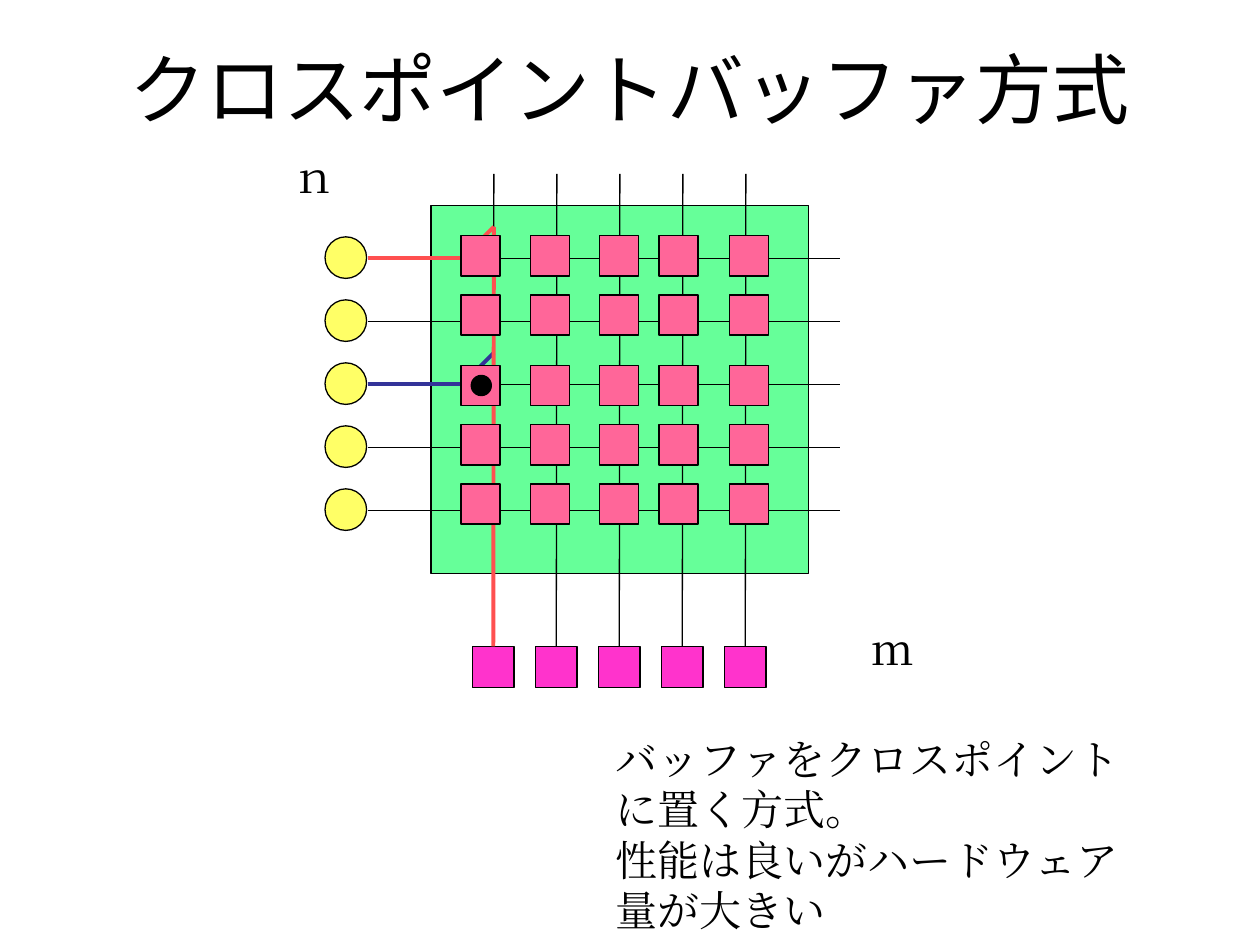
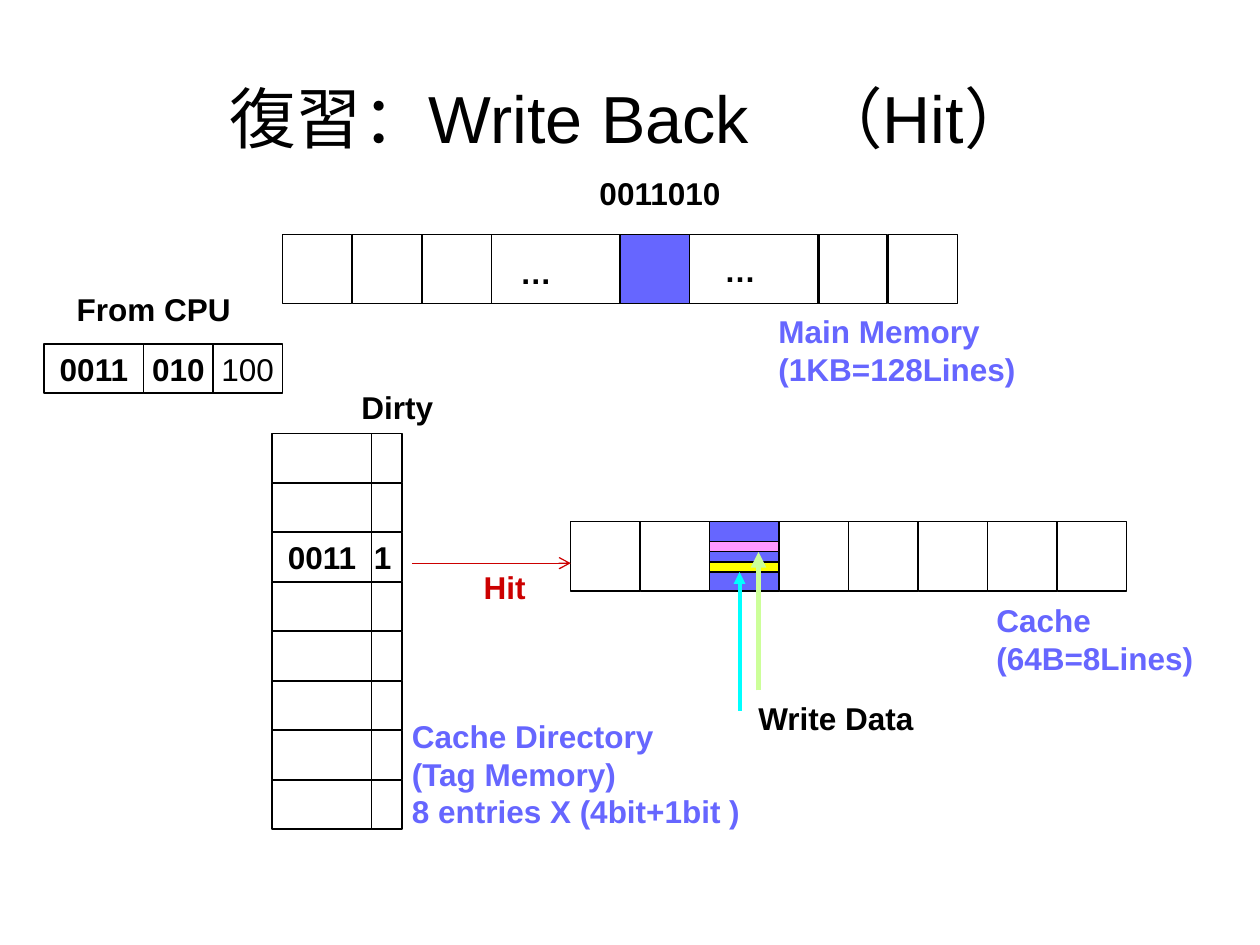
from lxml import etree
from pptx import Presentation
from pptx.dml.color import RGBColor
from pptx.enum.shapes import MSO_CONNECTOR, MSO_SHAPE
from pptx.enum.text import MSO_ANCHOR, MSO_AUTO_SIZE, PP_ALIGN
from pptx.oxml.ns import qn
from pptx.util import Inches, Pt

RECT, OVAL = MSO_SHAPE.RECTANGLE, MSO_SHAPE.OVAL
STRAIGHT = MSO_CONNECTOR.STRAIGHT
MIDDLE = MSO_ANCHOR.MIDDLE
CENTER = PP_ALIGN.CENTER
GROW, FIXED = MSO_AUTO_SIZE.SHAPE_TO_FIT_TEXT, MSO_AUTO_SIZE.NONE
TOP = 0

BLACK = RGBColor(0x00, 0x00, 0x00)
WHITE = RGBColor(0xFF, 0xFF, 0xFF)
GREEN = RGBColor(0x66, 0xFF, 0x99)
LEMON = RGBColor(0xFF, 0xFF, 0x66)
MAGENTA = RGBColor(0xFF, 0x33, 0xCC)
ROSE = RGBColor(0xFF, 0x66, 0x99)
CORAL = RGBColor(0xFF, 0x50, 0x50)
NAVY = RGBColor(0x33, 0x33, 0x99)
BLUE = RGBColor(0x66, 0x66, 0xFF)
RED = RGBColor(0xCC, 0x00, 0x00)
YELLOW = RGBColor(0xFF, 0xFF, 0x00)
PINK = RGBColor(0xFF, 0x99, 0xFF)
CYAN = RGBColor(0x00, 0xFF, 0xFF)
LIME = RGBColor(0xCC, 0xFF, 0x99)

SANS, SERIF = "Arial", "Times New Roman"


class Deck:
    """Holds the presentation, its style and the current slide."""

    def __init__(self):
        self.prs = Presentation()
        self.prs.slide_width = Inches(10)
        self.prs.slide_height = Inches(7.5)
        self.slide = None

    def start(self, title, top, size):
        """Add a slide with its title."""
        self.slide = self.prs.slides.add_slide(self.prs.slide_layouts[5])
        head = self.slide.shapes.title
        head.left, head.top = Inches(0.5), Inches(top)
        head.width, head.height = Inches(9), Inches(1.25)
        frame = head.text_frame
        frame.auto_size = FIXED
        frame.vertical_anchor = MIDDLE
        self.fill_text(frame, [title], size, SANS, BLACK, False, CENTER)

    def fill_text(self, frame, lines, size, face, color, bold, align=None):
        for i, line in enumerate(lines):
            para = frame.add_paragraph() if i else frame.paragraphs[0]
            para.alignment = align
            run = para.add_run()
            run.text = line
            font = run.font
            font.size, font.name, font.bold = Pt(size), face, bold
            font.color.rgb = color
            east = etree.SubElement(font._element, qn("a:ea"))
            east.set("typeface", face)

    def shape(self, x, y, w, h, fill=WHITE, kind=RECT, text=None, bold=True):
        item = self.slide.shapes.add_shape(
            kind, Inches(x), Inches(y), Inches(w), Inches(h))
        item.shadow.inherit = False
        if fill is None:
            item.fill.background()
        else:
            item.fill.solid()
            item.fill.fore_color.rgb = fill
        item.line.color.rgb = BLACK
        item.line.width = Pt(0.75)
        if text:
            frame = item.text_frame
            frame.word_wrap = False
            frame.vertical_anchor = MIDDLE
            self.fill_text(frame, [text], 18, SANS, BLACK, bold, CENTER)
        return item

    def line(self, x1, y1, x2, y2, color=BLACK, width=0.75, tip=None):
        item = self.slide.shapes.add_connector(
            STRAIGHT, Inches(x1), Inches(y1), Inches(x2), Inches(y2))
        item.line.color.rgb = color
        item.line.width = Pt(width)
        if tip:
            end = etree.SubElement(item.line._get_or_add_ln(), qn("a:tailEnd"))
            end.set("type", tip)
        etree.SubElement(item._element.spPr, qn("a:effectLst"))
        return item

    def label(self, x, y, w, h, *lines, color=BLACK, size=18, face=SANS,
              bold=True, wrap=False):
        box = self.slide.shapes.add_textbox(
            Inches(x), Inches(y), Inches(w), Inches(h))
        frame = box.text_frame
        frame.word_wrap = wrap
        frame.auto_size = GROW
        self.fill_text(frame, lines, size, face, color, bold)


def crosspoint(deck):
    deck.start("クロスポイントバッファ方式", 0.07, 44)
    rows = [2.05 + 0.5 * i for i in range(5)]
    cols = [3.92 + 0.5 * i for i in range(5)]
    node = 0.33
    deck.shape(3.42, 1.63, 3, 2.92, GREEN)
    for y in rows:
        deck.line(2.92, y, 6.67, y)
        deck.shape(2.58, y - 0.17, node, node, LEMON, OVAL)
    sinks = []
    for x in cols:
        sink = deck.shape(x - 0.17, 5.13, node, node, MAGENTA)
        deck.line(x, 5.13, x, 1.38).begin_connect(sink, TOP)
        sinks.append(sink)

    plain = {"size": 24, "face": SERIF, "bold": False}
    deck.label(2.23, 1.15, 0.41, 0.5, "ｎ", **plain)
    deck.label(6.82, 4.9, 0.51, 0.5, "ｍ", **plain)
    for y, color in ((rows[0], CORAL), (rows[2], NAVY)):
        deck.line(3.67, y, 3.92, y - 0.25, color, 2.25)
        deck.line(2.92, y, 3.67, y, color, 2.25)
    route = deck.line(3.92, 1.8, 3.92, 5.13, CORAL, 2.25)
    route.end_connect(sinks[0], TOP)
    deck.label(4.79, 5.77, 5.03, 1.72, "バッファをクロスポイント",
               "に置く方式。", "性能は良いがハードウェア", "量が大きい",
               wrap=True, **plain)

    for y in (1.87, 2.34, 2.9, 3.37, 3.84):
        for x in (3.66, 4.21, 4.76, 5.23, 5.79):
            deck.shape(x, y, 0.31, 0.32, ROSE)
    deck.shape(3.74, 2.98, 0.16, 0.16, BLACK, OVAL)


def write_back(deck):
    deck.start("復習：Write Back　（Hit）", 0.3, 38)
    cell, tag, high, flag = 0.55, 0.79, 0.39, 0.24

    for x in (2.24, 2.8, 3.35, 4.92, 6.49, 7.05):
        deck.shape(x, 1.86, cell, cell, BLUE if x == 4.92 else WHITE)
    deck.shape(3.9, 1.86, 2.6, cell, None)
    deck.label(4.03, 1.96, 0.45, 0.4, "…")
    deck.label(5.65, 1.94, 0.45, 0.4, "…")
    deck.label(4.66, 1.33, 1.17, 0.4, "0011010")
    deck.label(6.08, 2.43, 2.08, 1, "Main Memory", "(1KB=128Lines)",
               color=BLUE)

    deck.label(0.51, 2.25, 1.42, 0.4, "From CPU")
    deck.shape(0.35, 2.73, tag, high, text="0011")
    deck.shape(1.14, 2.73, cell, high, text="010")
    deck.shape(1.69, 2.73, cell, high, text="100", bold=False)

    for i in range(8):
        y = 3.44 + 2.75 / 7 * i
        deck.shape(2.16, y, tag, high, text="0011" if i == 2 else None)
        deck.shape(2.95, y, flag, high)
    deck.label(2.87, 4.22, 0.34, 0.4, "1")
    deck.label(2.77, 3.03, 0.77, 0.4, "Dirty")
    deck.label(3.17, 5.64, 2.81, 1.3, "Cache Directory", "(Tag Memory)",
               "8 entries X (4bit+1bit )", color=BLUE)

    for i in range(8):
        deck.shape(4.53 + 3.86 / 7 * i, 4.14, cell, cell,
                   BLUE if i == 2 else WHITE)
    deck.label(7.81, 4.72, 1.76, 0.7, "Cache", "(64B=8Lines)", color=BLUE)
    deck.line(3.27, 4.47, 4.53, 4.47, RED, tip="arrow")
    deck.label(3.74, 4.46, 0.54, 0.4, "Hit", color=RED)

    deck.shape(5.63, 4.46, cell, 0.08, YELLOW)
    deck.line(5.87, 5.64, 5.87, 4.54, CYAN, 2.25, "triangle")
    deck.label(5.92, 5.5, 1.44, 0.4, "Write Data")
    deck.line(6.02, 5.48, 6.02, 4.38, LIME, 3, "triangle")
    deck.shape(5.63, 4.3, cell, 0.08, PINK)


def main():
    deck = Deck()
    crosspoint(deck)
    write_back(deck)
    deck.prs.save("out.pptx")


if __name__ == "__main__":
    main()
